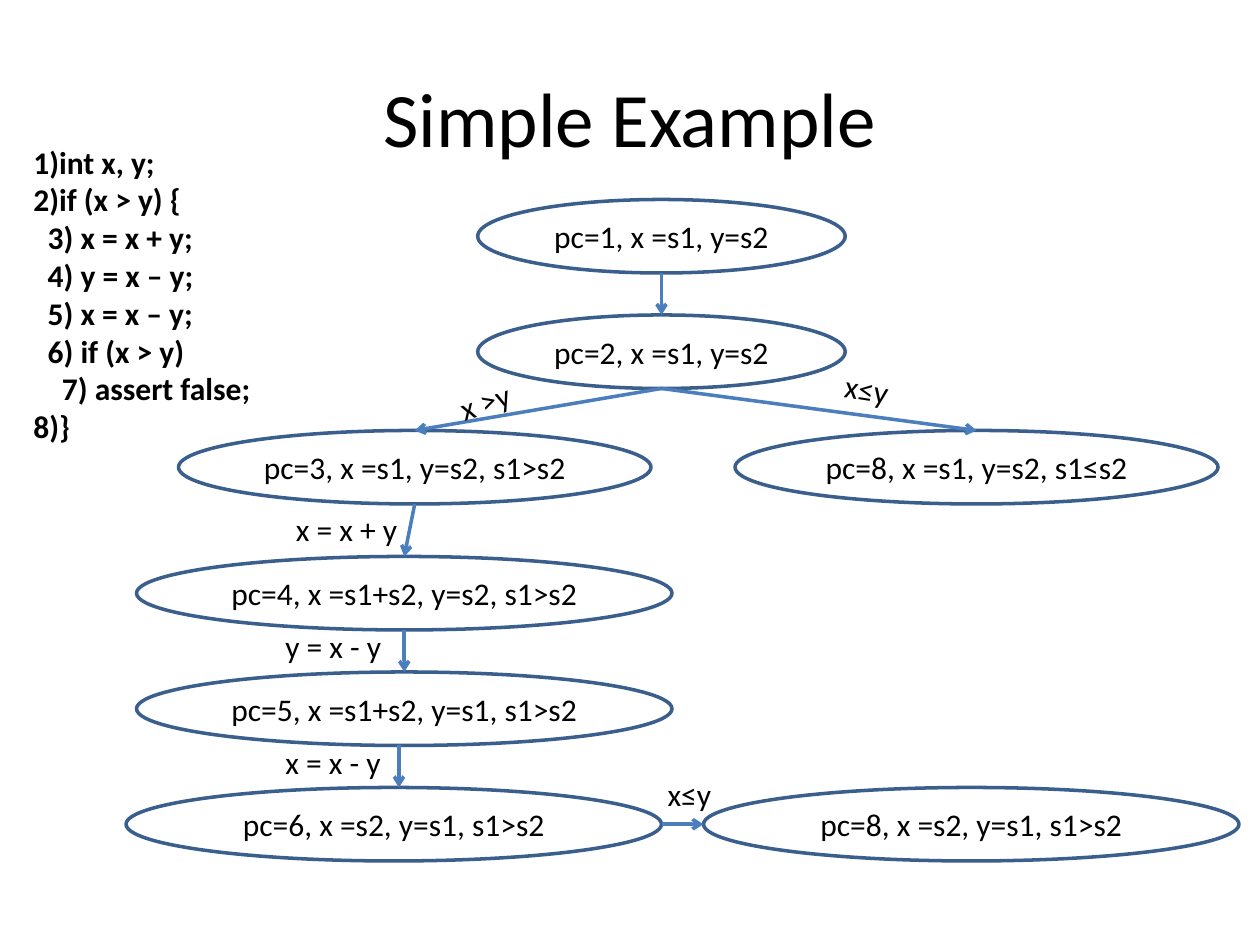
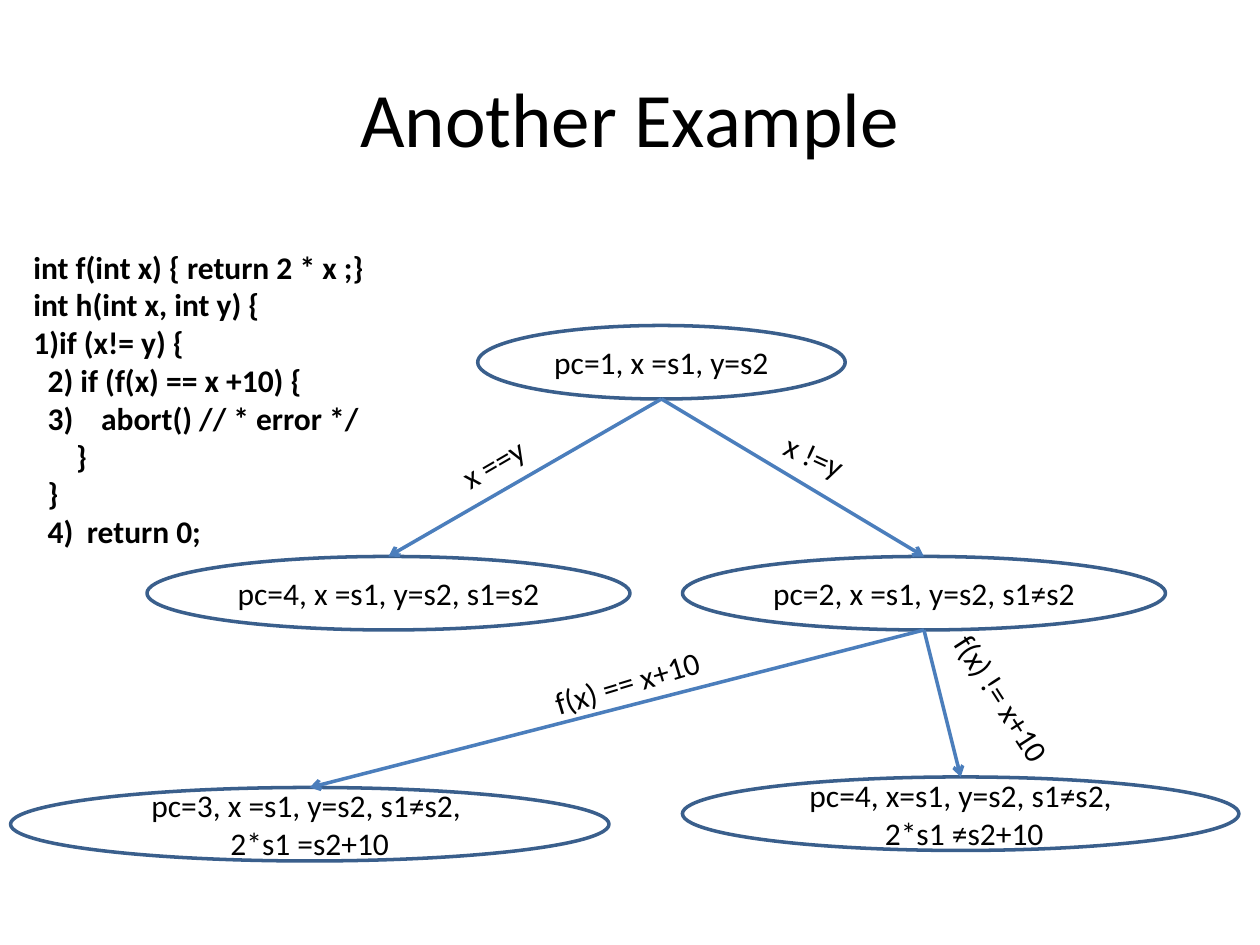
from dataclasses import dataclass
from typing import Optional

import lxml.etree
import pptx
import pptx.dml.color
import pptx.enum.shapes
import pptx.enum.text
import pptx.oxml.ns
import pptx.shapes.autoshape
import pptx.slide
import pptx.text.text
import pptx.util

# Shared style: a grid of 120 columns by 90 rows
COLORS = {"text": "000000", "outline": "3A5F8C", "arrow": "4B7EBC"}
FONT = "Calibri"
TITLE_SIZE, BODY_SIZE, LINE_WIDTH = 44, 18, 2
CELL = pptx.util.Inches(10) / 120
NODE_HEIGHT, LABEL_HEIGHT = 7, 4.8
CODE_STEP = 1.36  # columns per level of code indent

CENTER = pptx.enum.text.PP_ALIGN.CENTER
LEFT = pptx.enum.text.PP_ALIGN.LEFT
TOP = pptx.enum.text.MSO_ANCHOR.TOP
MIDDLE = pptx.enum.text.MSO_ANCHOR.MIDDLE


@dataclass
class CodeLine:
    text: str
    level: int = 0
    tab_level: float = 0  # where text after a tab starts


@dataclass
class Code:
    column: float
    row: float
    width: float
    height: float
    lines: list[CodeLine]


@dataclass
class Node:
    column: float
    row: float
    width: float
    lines: list[str]

    @property
    def middle(self) -> float:
        return self.column + self.width / 2


@dataclass
class Edge:
    start: str
    end: str
    sideways: bool = False
    column: Optional[float] = None  # forces a vertical arrow here


@dataclass
class Label:
    column: float
    row: float
    width: float
    text: str
    rotation: float = 0


@dataclass
class Example:
    title: str
    code: Code
    nodes: dict[str, Node]
    edges: list[Edge]
    labels: list[Label]


def grid(cells: float) -> pptx.util.Emu:
    return pptx.util.Emu(round(cells * CELL))


def color(name: str) -> pptx.dml.color.RGBColor:
    return pptx.dml.color.RGBColor.from_string(COLORS[name])


def write_lines(frame: pptx.text.text.TextFrame, lines: list[str], size: float = BODY_SIZE,
                alignment=LEFT, anchor=TOP, bold: bool = False) -> None:
    frame.word_wrap = True
    frame.vertical_anchor = anchor
    for index, text in enumerate(lines):
        paragraph = frame.add_paragraph() if index else frame.paragraphs[0]
        paragraph.alignment = alignment
        run = paragraph.add_run()
        run.text = text
        run.font.name, run.font.size, run.font.bold = FONT, pptx.util.Pt(size), bold
        run.font.color.rgb = color("text")


def draw_title(slide: pptx.slide.Slide, text: str) -> None:
    title = slide.shapes.title
    title.left, title.top, title.width, title.height = map(grid, (6, 3.6, 108, 15))
    write_lines(title.text_frame, [text], TITLE_SIZE, CENTER, MIDDLE)


def draw_code(slide: pptx.slide.Slide, code: Code) -> None:
    box = slide.shapes.add_textbox(*map(grid, (code.column, code.row, code.width, code.height)))
    write_lines(box.text_frame, [line.text for line in code.lines], bold=True)
    for line, paragraph in zip(code.lines, box.text_frame.paragraphs):
        margin = max(line.level, line.tab_level)
        properties = paragraph._p.get_or_add_pPr()
        properties.set("marL", str(grid(margin * CODE_STEP)))
        properties.set("indent", str(grid((line.level - margin) * CODE_STEP)))


def draw_node(slide: pptx.slide.Slide, node: Node) -> None:
    ellipse = slide.shapes.add_shape(
        pptx.enum.shapes.MSO_SHAPE.OVAL,
        *map(grid, (node.column, node.row, node.width, NODE_HEIGHT)))
    ellipse.shadow.inherit = False
    ellipse.fill.background()
    ellipse.line.color.rgb = color("outline")
    ellipse.line.width = pptx.util.Pt(LINE_WIDTH)
    write_lines(ellipse.text_frame, node.lines, alignment=CENTER, anchor=MIDDLE)


def draw_edge(slide: pptx.slide.Slide, edge: Edge, nodes: dict[str, Node]) -> None:
    start, end = nodes[edge.start], nodes[edge.end]
    if edge.sideways:
        points = (start.column + start.width, start.row + NODE_HEIGHT / 2,
                  end.column, end.row + NODE_HEIGHT / 2)
    else:
        points = (edge.column or start.middle, start.row + NODE_HEIGHT,
                  edge.column or end.middle, end.row)
    arrow = slide.shapes.add_connector(
        pptx.enum.shapes.MSO_CONNECTOR.STRAIGHT, *map(grid, points))
    arrow.line.color.rgb = color("arrow")
    arrow.line.width = pptx.util.Pt(LINE_WIDTH)
    properties = arrow._element.spPr
    qn = pptx.oxml.ns.qn
    lxml.etree.SubElement(properties.find(qn("a:ln")), qn("a:tailEnd"), type="arrow")
    lxml.etree.SubElement(properties, qn("a:effectLst"))


def draw_label(slide: pptx.slide.Slide, label: Label) -> None:
    box = slide.shapes.add_textbox(
        *map(grid, (label.column, label.row, label.width, LABEL_HEIGHT)))
    box.rotation = label.rotation
    write_lines(box.text_frame, [label.text])


def draw_example(presentation, example: Example) -> None:
    slide = presentation.slides.add_slide(presentation.slide_layouts[5])  # title only
    draw_title(slide, example.title)
    draw_code(slide, example.code)
    for node in example.nodes.values():
        draw_node(slide, node)
    for edge in example.edges:
        draw_edge(slide, edge, example.nodes)
    for label in example.labels:
        draw_label(slide, label)


# Swap program: one path per branch
SIMPLE = Example(
    title="Simple Example",
    code=Code(2, 13, 26, 30.2, [
        CodeLine("1)int x, y;"),
        CodeLine("2)if (x > y) {"),
        CodeLine("3) x = x + y;", 1),
        CodeLine("4) y = x – y;", 1),
        CodeLine("5) x = x – y;", 1),
        CodeLine("6) if (x > y)", 1),
        CodeLine("7) assert false;", 2),
        CodeLine("8)}"),
    ]),
    nodes={
        "declare": Node(45.5, 19, 35, ["pc=1, x =s1, y=s2"]),
        "compare": Node(45.5, 30, 35, ["pc=2, x =s1, y=s2"]),
        "greater": Node(17, 41, 45, ["pc=3, x =s1, y=s2, s1>s2"]),
        "skip": Node(70, 41, 46, ["pc=8, x =s1, y=s2, s1≤s2"]),
        "sum": Node(13, 53, 51, ["pc=4, x =s1+s2, y=s2, s1>s2"]),
        "new y": Node(13, 64, 51, ["pc=5, x =s1+s2, y=s1, s1>s2"]),
        "new x": Node(12, 75, 51, ["pc=6, x =s2, y=s1, s1>s2"]),
        "finish": Node(67, 75, 51, ["pc=8, x =s2, y=s1, s1>s2"]),
    },
    edges=[
        Edge("declare", "compare"),
        Edge("compare", "greater"),
        Edge("compare", "skip"),
        Edge("greater", "sum"),
        Edge("sum", "new y"),
        Edge("new y", "new x", column=38),
        Edge("new x", "finish", sideways=True),
    ],
    labels=[
        Label(42.5, 35.4, 10, "x >y", 341.8),
        Label(79.3, 34.7, 7, "x≤y", 9.2),
        Label(27, 48, 13, "x = x + y"),
        Label(26, 59.1, 13, "y = x - y"),
        Label(26, 70.2, 13, "x = x - y"),
        Label(62.4, 73.2, 7, "x≤y"),
    ],
)

# Function call inside a branch condition
ANOTHER = Example(
    title="Another Example",
    code=Code(2, 23, 35, 34, [
        CodeLine("int f(int x) { return 2 * x ;}"),
        CodeLine("int h(int x, int y) {"),
        CodeLine("1)if (x!= y) {"),
        CodeLine("2) if (f(x) == x +10) {", 1),
        CodeLine("3)\tabort() // * error */", 1, 4.75),
        CodeLine("}", 3),
        CodeLine("}", 1),
        CodeLine("4)\treturn 0;", 1, 3.75),
    ]),
    nodes={
        "compare": Node(45.5, 31, 35, ["pc=1, x =s1, y=s2"]),
        "equal": Node(14, 53, 46, ["pc=4, x =s1, y=s2, s1=s2"]),
        "different": Node(65, 53, 46, ["pc=2, x =s1, y=s2, s1≠s2"]),
        "return": Node(65, 74, 53, ["pc=4, x=s1, y=s2, s1≠s2,", " 2*s1 ≠s2+10"]),
        "abort": Node(1, 75, 57, ["pc=3, x =s1, y=s2, s1≠s2, ", "2*s1 =s2+10"]),
    },
    edges=[
        Edge("compare", "equal"),
        Edge("compare", "different"),
        Edge("different", "return"),
        Edge("different", "abort"),
    ],
    labels=[
        Label(42.5, 41.4, 10, "x ==y", 329.8),
        Label(73.4, 41.4, 10, "x !=y", 24.7),
        Label(87, 64.8, 17.8, "f(x) != x+10", 57.3),
        Label(51.4, 62.4, 17.8, "f(x) == x+10", 343.3),
    ],
)


def main() -> None:
    presentation = pptx.Presentation()
    presentation.slide_width, presentation.slide_height = grid(120), grid(90)
    for example in (SIMPLE, ANOTHER):
        draw_example(presentation, example)
    presentation.save("out.pptx")


if __name__ == "__main__":
    main()
